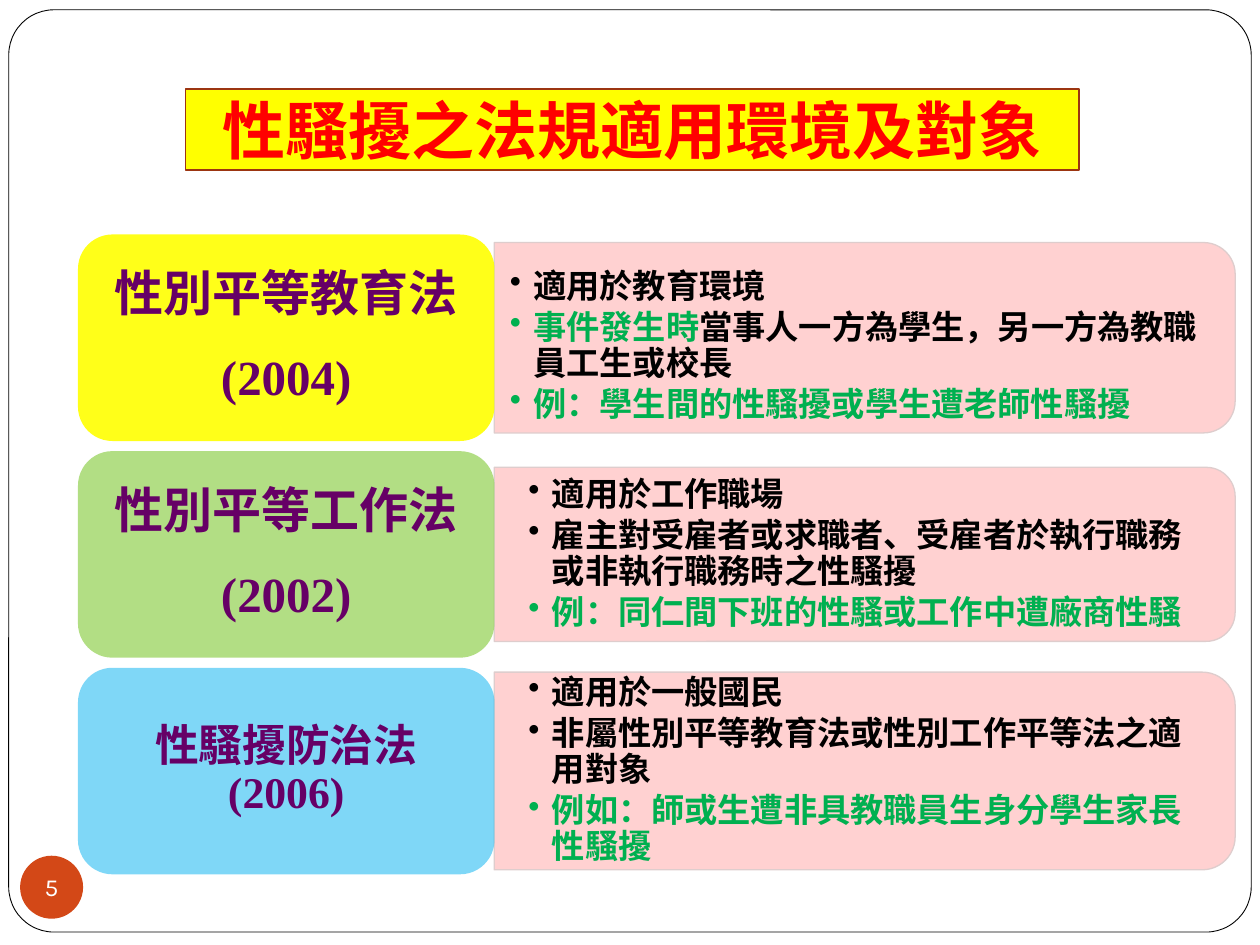
import pptx
import pptx.util
import pptx.dml.color
import pptx.enum.shapes
import pptx.enum.text
import pptx.oxml
import pptx.oxml.ns

Pt = pptx.util.Pt
Kind = pptx.enum.shapes.MSO_SHAPE
Align = pptx.enum.text.PP_ALIGN
Mid = pptx.enum.text.MSO_ANCHOR.MIDDLE
RGB = pptx.dml.color.RGBColor.from_string
qn = pptx.oxml.ns.qn
NS = pptx.oxml.ns.nsdecls("a")

hues = {
    "white": "FFFFFF", "black": "000000", "badge": "D34817", "panel": "FFCCCC",
    "edge": "DECDCD", "yellow": "FFFF00", "green": "92D050", "blue": "00B0F0",
    "purple": "660066", "note": "00B050", "red": "FF0000", "rim": "9C3511",
}


def paint(shape, fill, alpha=100, line=None, width=1):
    """Set fill with opacity in percent, outline, and drop the shadow."""
    shape.shadow.inherit = False
    shape.fill.solid()
    shape.fill.fore_color.rgb = RGB(hues[fill])
    if alpha < 100:
        color = shape._element.spPr.find(qn("a:solidFill"))[0]
        color.append(pptx.oxml.parse_xml(f'<a:alpha {NS} val="{alpha * 1000}"/>'))
    if line:
        shape.line.color.rgb = RGB(hues[line])
        shape.line.width = Pt(width)
    else:
        shape.line.fill.background()


def setup(shape, pads):
    """Wrap and centre the text vertically; pads are left, top, right, bottom."""
    frame = shape.text_frame
    frame.word_wrap = True
    frame.auto_size = pptx.enum.text.MSO_AUTO_SIZE.NONE
    frame.vertical_anchor = Mid
    (frame.margin_left, frame.margin_top,
     frame.margin_right, frame.margin_bottom) = [Pt(pad) for pad in pads]
    return frame


deck = pptx.Presentation()
deck.slide_width, deck.slide_height = Pt(720), Pt(540)
slide = deck.slides.add_slide(deck.slide_layouts[5])
shapes = slide.shapes

# Page frame and number
page = shapes.add_shape(Kind.ROUNDED_RECTANGLE, Pt(5), Pt(5.6), Pt(710), Pt(527))
page.adjustments[0] = 0.049
paint(page, "white", line="black", width=0.5)

badge = shapes.add_shape(Kind.OVAL, Pt(11.5), Pt(489), Pt(36), Pt(36))
paint(badge, "badge")
para = setup(badge, (0, 0, 0, 0)).paragraphs[0]
para.text = "5"
para.alignment = Align.CENTER
para.font.size, para.font.name = Pt(14), "Karla"
para.font.color.rgb = RGB(hues["white"])

# One row per law: label lines, size, fill, opacity, panel height, pads, bullets
wide = (19.5, 10, 19.5, 10)
rows = [
    (["性別平等教育法", "(2004)"], 28, "yellow", 90, 108.8, (9, 10, 0, 0), [
        [("適用於教育環境", "black")],
        [("事件發生時", "note"),
         ("當事人一方為學生，另一方為教職員工生或校長", "black")],
        [("例：學生間的性騷擾或學生遭老師性騷擾", "note")]]),
    (["性別平等工作法", "(2002)"], 28, "green", 70, 99.5, wide, [
        [("適用於工作職場", "black")],
        [("雇主對受雇者或求職者、受雇者於執行職務或非執行職務時之性騷擾", "black")],
        [("例：同仁間下班的性騷或工作中遭廠商性騷", "note")]]),
    (["性騷擾防治法(2006)"], 25, "blue", 50, 113, wide, [
        [("適用於一般國民", "black")],
        [("非屬性別平等教育法或性別工作平等法之適用對象", "black")],
        [("例如：師或生遭非具教職員生身分學生家長性騷擾", "note")]]),
]
left, span, edge = 282.4, 423.4, 44.6
tall, step, first = 118, 123.8, 193

for i, (names, size, fill, alpha, high, pads, points) in enumerate(rows):
    mid = first + i * step

    # The panel is turned a quarter so that its rounded side faces right
    panel = shapes.add_shape(
        Kind.ROUND_2_SAME_RECTANGLE, Pt(left + span / 2 - high / 2),
        Pt(mid - span / 2), Pt(high), Pt(span))
    panel.rotation = 90
    paint(panel, "panel", 90, "edge", 0.75)

    box = shapes.add_textbox(Pt(left), Pt(mid - high / 2 + 5), Pt(418), Pt(high - 10))
    frame = setup(box, pads)
    for j, point in enumerate(points):
        para = frame.paragraphs[0] if j == 0 else frame.add_paragraph()
        para.line_spacing = 0.9
        para.space_after = Pt(3)
        para.font.size, para.font.name, para.font.bold = Pt(19), "Times New Roman", True
        props = para._p.get_or_add_pPr()
        props.set("marL", str(Pt(13.5)))
        props.set("indent", str(-Pt(13.5)))
        bullet = pptx.oxml.parse_xml(f'<a:buChar {NS} char="•"/>')
        props.find(qn("a:defRPr")).addprevious(bullet)
        for text, hue in point:
            run = para.add_run()
            run.text = text
            run.font.color.rgb = RGB(hues[hue])

    label = shapes.add_shape(
        Kind.ROUNDED_RECTANGLE, Pt(edge), Pt(mid - tall / 2), Pt(238), Pt(tall))
    paint(label, fill, alpha)
    frame = setup(label, (8, 4, 8, 4))
    frame.text = "\n".join(names)
    for para in frame.paragraphs:
        para.alignment = Align.CENTER
        para.line_spacing = 0.9
        para.font.size, para.font.name, para.font.bold = Pt(size), "Times New Roman", True
        para.font.color.rgb = RGB(hues["purple"])
    for para in frame.paragraphs[:-1]:
        para.space_after = Pt(17.5)

# Title, brought in front of the page frame
title = shapes.title
title.left, title.top, title.width, title.height = Pt(106), Pt(51), Pt(510.5), Pt(46)
outline = pptx.oxml.parse_xml(f'<a:prstGeom {NS} prst="roundRect"><a:avLst/></a:prstGeom>')
title._element.spPr.find(qn("a:xfrm")).addnext(outline)
paint(title, "yellow", line="rim")
para = setup(title, (7.2, 3.6, 7.2, 3.6)).paragraphs[0]
para.text = "性騷擾之法規適用環境及對象"
para.alignment = Align.CENTER
para.font.size, para.font.name, para.font.bold = Pt(36), "Noto Sans CJK SC", True
para.font.color.rgb = RGB(hues["red"])
shapes._spTree.append(title._element)

deck.save("out.pptx")
